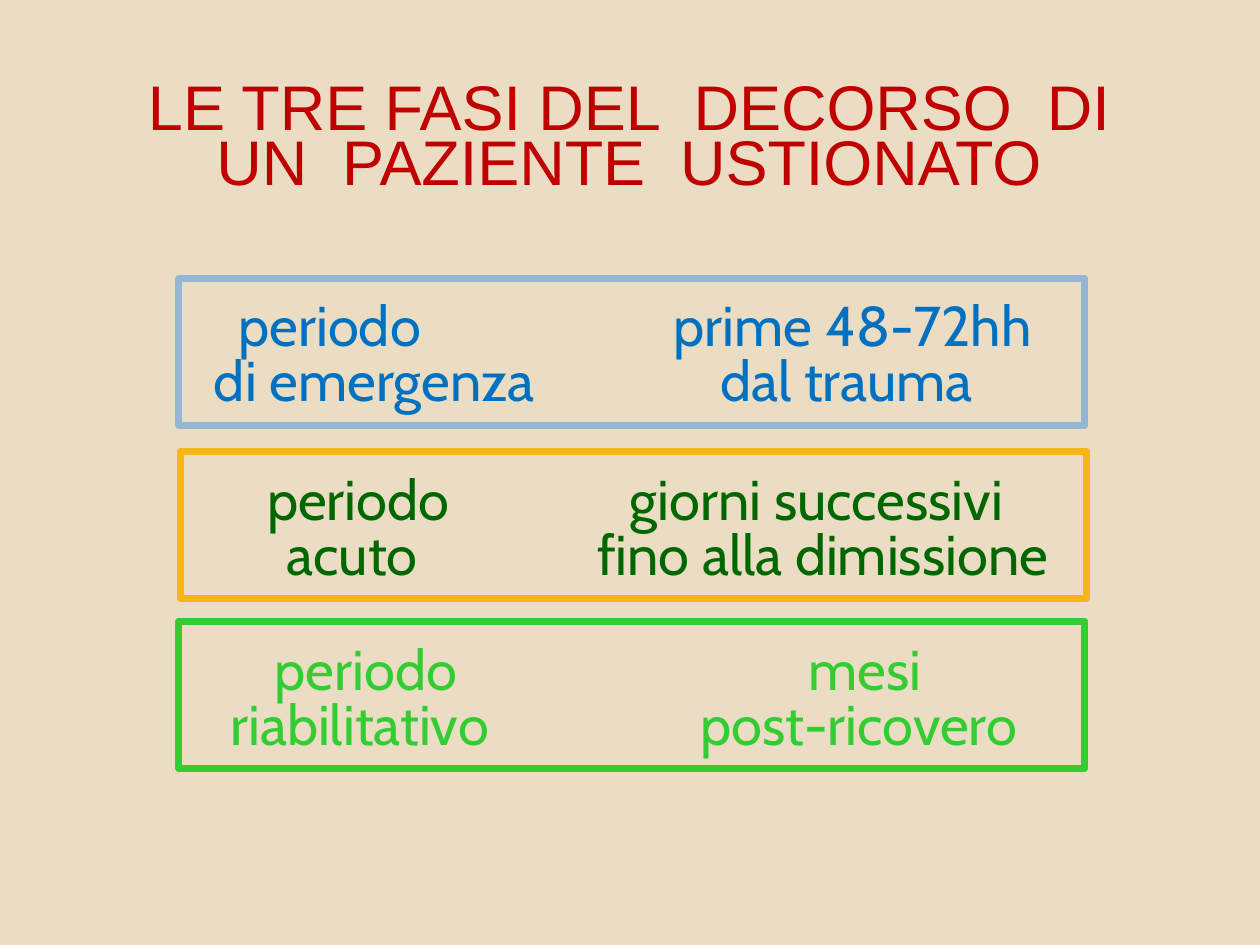
from pptx import Presentation
from pptx.dml.color import RGBColor
from pptx.enum.shapes import MSO_SHAPE
from pptx.enum.text import PP_ALIGN
from pptx.util import Pt

RECT = MSO_SHAPE.RECTANGLE
LEFT, MID = PP_ALIGN.LEFT, PP_ALIGN.CENTER

TITLE = ["LE TRE FASI DEL  DECORSO  DI", "UN  PAZIENTE  USTIONATO"]

# Each phase: frame place and colour, text top and colour, then its cells.
# Each cell: left, width, alignment, left and right indent of line one, lines
PHASES = [
    ((102.2, 159.1, "94B6D2"), (162.7, "0070C0"), [
        (115.2, 213.1, LEFT, 14, 0, ["periodo", "di emergenza"]),
        (359.3, 249.1, MID, 7, 0, ["prime 48-72hh", "dal trauma"])]),
    ((103, 257.8, "F7B615"), (262.1, "006600"), [
        (126, 150.5, MID, 7, 0, ["periodo", "acuto"]),
        (311.8, 316.8, MID, 0, 7, ["giorni successivi", "fino alla dimissione"])]),
    ((102.2, 355, "33CC33"), (359.3, "33CC33"), [
        (112.3, 186.5, MID, 7, 0, ["periodo", "riabilitativo"]),
        (385.2, 211, MID, 7, 0, ["mesi", "post-ricovero"])]),
]
FRAME_W, FRAME_H, CELL_H = 517.7, 84.2, 76.3


def rgb(code):
    return RGBColor.from_string(code)


def add_text(slide, box, lines, font, size, color, align, pads, gap):
    """Write lines; pads holds (left, right) indents for each line."""
    frame = slide.shapes.add_textbox(*map(Pt, box)).text_frame
    frame.word_wrap = True
    for i, (line, (left, right)) in enumerate(zip(lines, pads)):
        para = frame.add_paragraph() if i else frame.paragraphs[0]
        para.alignment = align
        props = para._p.get_or_add_pPr()
        props.set("marL", str(Pt(left)))
        props.set("marR", str(Pt(right)))
        if i:
            para.line_spacing = gap
        run = para.add_run()
        run.text = line
        run.font.name = font
        run.font.size = Pt(size)
        run.font.color.rgb = rgb(color)


def add_frame(slide, left, top, color):
    shape = slide.shapes.add_shape(
        RECT, Pt(left), Pt(top), Pt(FRAME_W), Pt(FRAME_H))
    shape.shadow.inherit = False
    shape.fill.background()
    shape.line.color.rgb = rgb(color)
    shape.line.width = Pt(4)


def main():
    prs = Presentation()
    prs.slide_width, prs.slide_height = Pt(720), Pt(540)
    slide = prs.slides.add_slide(prs.slide_layouts[6])
    back = slide.background.fill
    back.solid()
    back.fore_color.rgb = rgb("EBDDC3")

    # Title
    add_text(slide, (69.8, 35.3, 589.7, 81.4), TITLE, "Arial", 36,
             "C00000", MID, [(0, 10), (0, 10)], 0.7)

    # Phases: two text cells inside a coloured frame
    for edge, (top, color), cells in PHASES:
        for left, width, align, pad_l, pad_r, lines in cells:
            add_text(slide, (left, top, width, CELL_H), lines, "Cabin", 32,
                     color, align, [(pad_l, pad_r), (0, 0)], 0.8)
        add_frame(slide, *edge)

    prs.save("out.pptx")


if __name__ == "__main__":
    main()
